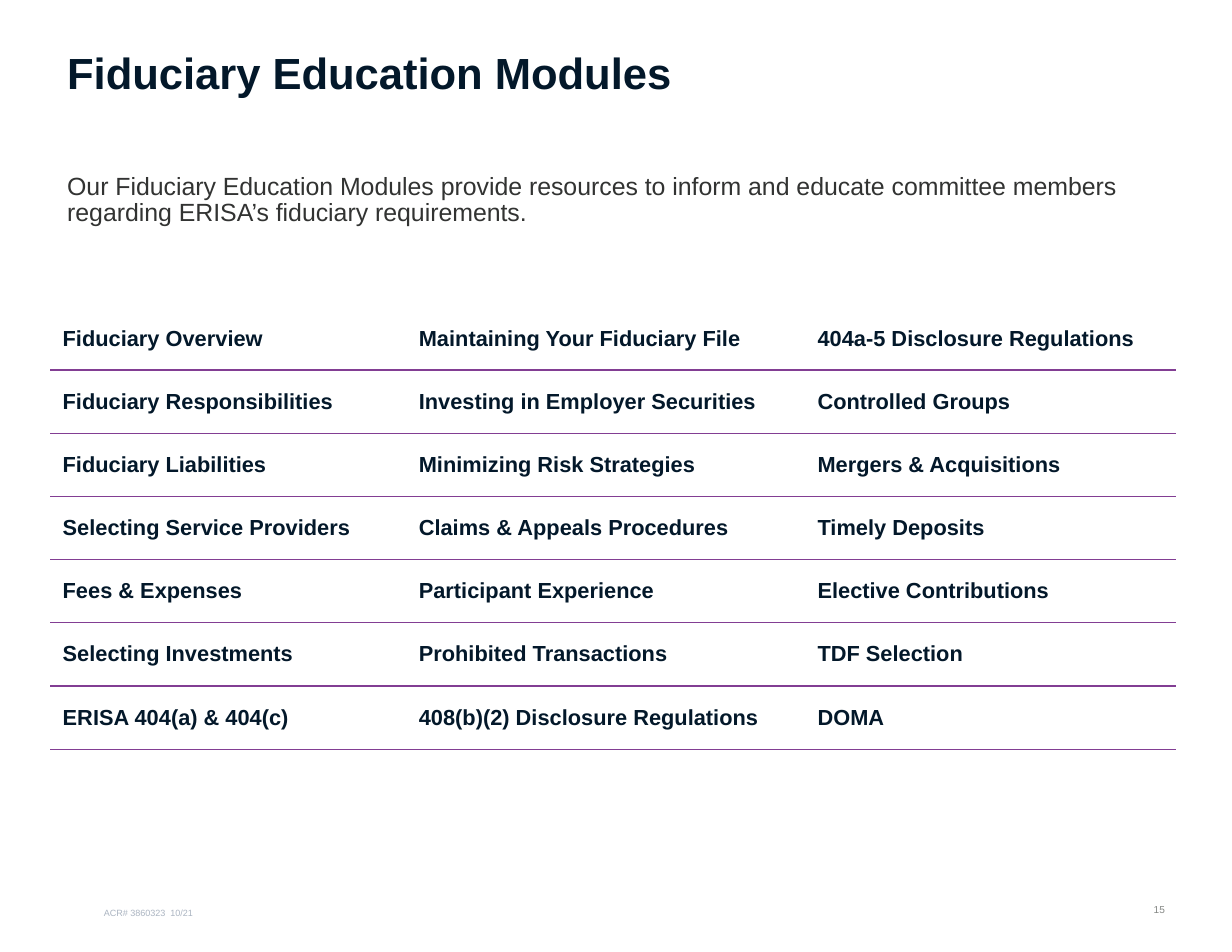
from dataclasses import dataclass

from lxml import etree
from pptx import Presentation
from pptx import util as u
from pptx.dml.color import RGBColor
from pptx.enum import text
from pptx.oxml.ns import qn


@dataclass(frozen=True)
class Theme:
    font: str = "Arial"
    navy: str = "03182A"
    ink: str = "323332"
    gray: str = "838683"
    pale: str = "AAB4C1"
    rule: str = "823E93"
    title: float = 28
    body: float = 16
    cell: float = 14
    page: float = 6.5
    note: float = 5.8


THEME = Theme()
LEFT, RIGHT = text.PP_ALIGN.LEFT, text.PP_ALIGN.RIGHT
TOP, MIDDLE, BOTTOM = text.MSO_ANCHOR.TOP, text.MSO_ANCHOR.MIDDLE, text.MSO_ANCHOR.BOTTOM

MODULES = [
    ("Fiduciary Overview", "Maintaining Your Fiduciary File", "404a-5 Disclosure Regulations"),
    ("Fiduciary Responsibilities", "Investing in Employer Securities", "Controlled Groups"),
    ("Fiduciary Liabilities", "Minimizing Risk Strategies", "Mergers & Acquisitions"),
    ("Selecting Service Providers", "Claims & Appeals Procedures", "Timely Deposits"),
    ("Fees & Expenses", "Participant Experience", "Elective Contributions"),
    ("Selecting Investments", "Prohibited Transactions", "TDF Selection"),
    ("ERISA 404(a) & 404(c)", "408(b)(2) Disclosure Regulations", "DOMA"),
]
WIDTHS = (3.18, 3.56, 3.31)
TALL = 3.95


def style(para, size, color, bold=False):
    for run in para.runs:
        font = run.font
        font.name, font.size, font.bold = THEME.font, u.Pt(size), bold
        font.color.rgb = RGBColor.from_string(color)


def write(shape, words, size, color, bold=False, align=LEFT, anchor=TOP):
    frame = shape.text_frame
    frame.text = words
    frame.word_wrap = True
    frame.auto_size = text.MSO_AUTO_SIZE.NONE
    frame.vertical_anchor = anchor
    para = frame.paragraphs[0]
    para.alignment = align
    style(para, size, color, bold)
    return para


def place(shape, *box):
    shape.left, shape.top, shape.width, shape.height = map(u.Inches, box)


def add_title(slide):
    shape = slide.shapes.title
    place(shape, 0.5, 0.46, 10, 0.42)
    para = write(shape, "Fiduciary Education Modules", THEME.title, THEME.navy, True, anchor=MIDDLE)
    para.line_spacing = 0.9


def add_body(slide):
    shape = slide.placeholders[1]
    place(shape, 0.5, 1.5, 10, 0.62)
    words = ("Our Fiduciary Education Modules provide resources to inform and educate "
             "committee members regarding ERISA’s fiduciary requirements.")
    para = write(shape, words, THEME.body, THEME.ink)
    props = para._p.get_or_add_pPr()
    props.set("marL", "0")
    props.set("indent", "0")
    etree.SubElement(props, qn("a:buNone"))
    para.line_spacing = 0.9
    para.space_before, para.space_after = u.Pt(0), u.Pt(6.5)


def add_label(slide, box, words, size, color, align, anchor):
    shape = slide.shapes.add_textbox(*map(u.Inches, box))
    write(shape, words, size, color, align=align, anchor=anchor)


def add_edge(cell, side, color=None):
    line = etree.SubElement(cell._tc.get_or_add_tcPr(), qn(f"a:ln{side}"))
    if color:
        line.set("w", str(u.Pt(1)))
        fill = etree.SubElement(line, qn("a:solidFill"))
        etree.SubElement(fill, qn("a:srgbClr")).set("val", color)
    else:
        line.set("w", "0")
        etree.SubElement(line, qn("a:noFill"))


def fill_cell(cell, words, first):
    cell.text = words
    cell.vertical_anchor = MIDDLE
    cell.margin_left = cell.margin_right = u.Inches(0.11)
    cell.margin_top = cell.margin_bottom = u.Inches(0.06)
    style(cell.text_frame.paragraphs[0], THEME.cell, THEME.navy, True)
    add_edge(cell, "L")
    add_edge(cell, "R")
    add_edge(cell, "T", None if first else THEME.rule)
    add_edge(cell, "B", THEME.rule)
    cell.fill.background()


def add_grid(slide):
    box = map(u.Inches, (0.45, 2.74, sum(WIDTHS), TALL))
    table = slide.shapes.add_table(len(MODULES), len(WIDTHS), *box).table
    table.first_row = table.horz_banding = False
    for col, width in zip(table.columns, WIDTHS):
        col.width = u.Inches(width)
    for i, names in enumerate(MODULES):
        table.rows[i].height = u.Inches(TALL / len(MODULES))
        for j, name in enumerate(names):
            fill_cell(table.cell(i, j), name, i == 0)


def main():
    deck = Presentation()
    deck.slide_width, deck.slide_height = u.Inches(11), u.Inches(8.5)
    slide = deck.slides.add_slide(deck.slide_layouts[1])
    add_title(slide)
    add_body(slide)
    add_label(slide, (10, 7.93, 0.5, 0.38), "15", THEME.page, THEME.gray, RIGHT, MIDDLE)
    add_grid(slide)
    add_label(slide, (0.83, 8, 4.75, 0.25), "ACR# 3860323  10/21", THEME.note, THEME.pale, LEFT, BOTTOM)
    deck.save("out.pptx")


if __name__ == "__main__":
    main()
